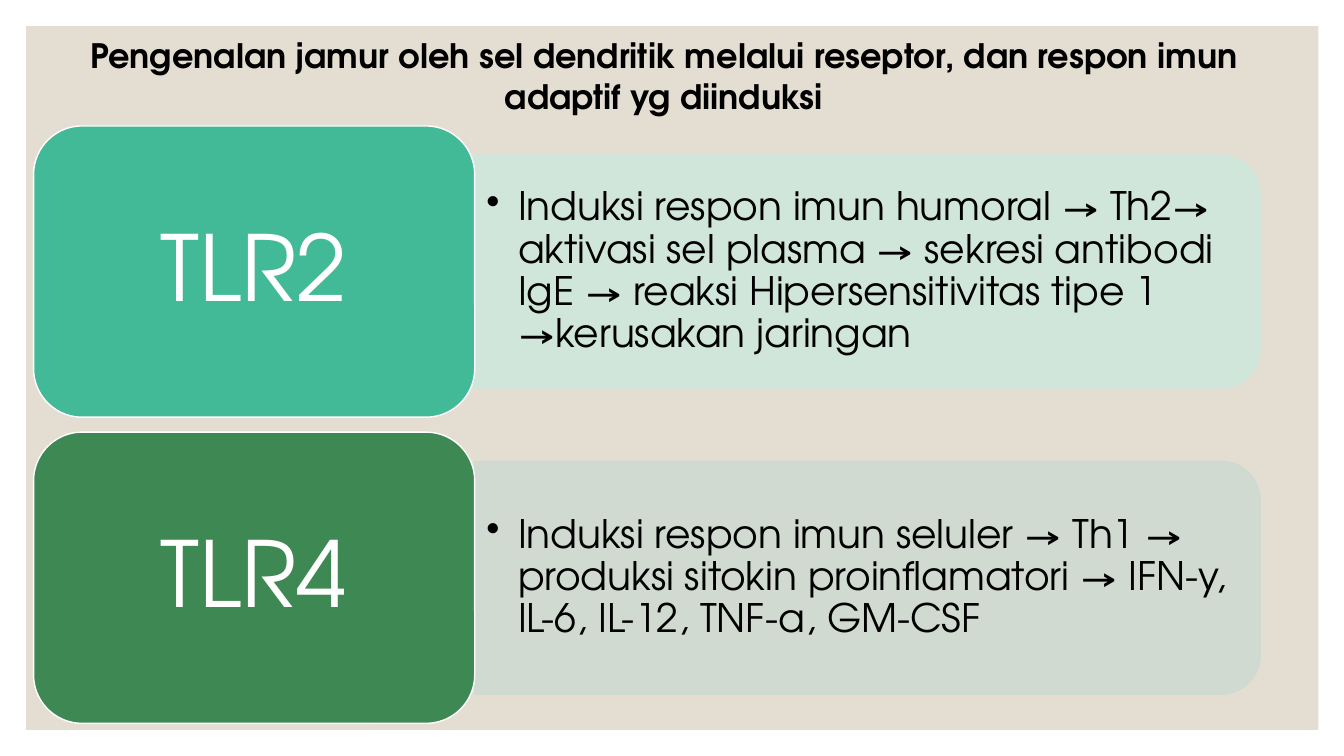
from lxml.etree import SubElement
from pptx import Presentation
from pptx.dml.color import RGBColor
from pptx.enum.shapes import MSO_SHAPE
from pptx.enum.text import MSO_ANCHOR, MSO_AUTO_SIZE, PP_ALIGN
from pptx.oxml.ns import qn
from pptx.util import Pt

HUES = {
    "panel": "E3DED1", "white": "FFFFFF", "black": "000000",
    "teal": "42BA97", "mint": "CFE7DD",
    "green": "3E8853", "sage": "CEDAD1",
}
TITLE = ("Pengenalan jamur oleh sel dendritik melalui reseptor, "
         "dan respon imun adaptif yg diinduksi")
ROWS = [
    ("TLR2", "teal", "mint",
     "Induksi respon imun humoral → Th2→ aktivasi sel plasma → sekresi "
     "antibodi IgE → reaksi Hipersensitivitas tipe 1 →kerusakan jaringan"),
    ("TLR4", "green", "sage",
     "Induksi respon imun seluler → Th1 → produksi sitokin proinflamatori "
     "→ IFN-y, IL-6, IL-12, TNF-a, GM-CSF"),
]
TOP, PITCH = 90, 218.7
HIGH, DEEP = 208, 166.4


class Deck:
    """Holds the style and the current slide."""

    font = "TeX Gyre Adventor"

    def __init__(self, slide):
        self.shapes = slide.shapes

    def hue(self, name):
        return RGBColor.from_string(HUES[name])

    def place(self, item, left, top, width, height):
        item.left, item.top = Pt(left), Pt(top)
        item.width, item.height = Pt(width), Pt(height)

    def text(self, frame, words, size, hue, bold=False, align=PP_ALIGN.CENTER,
             anchor=MSO_ANCHOR.MIDDLE, space=0.9):
        frame.word_wrap = True
        frame.auto_size = MSO_AUTO_SIZE.NONE
        frame.vertical_anchor = anchor
        para = frame.paragraphs[0]
        para.alignment = align
        para.line_spacing = space
        run = para.add_run()
        run.text = words
        run.font.name, run.font.size = self.font, Pt(size)
        run.font.bold = bold
        run.font.color.rgb = self.hue(hue)
        return para

    def shape(self, kind, box, fill, line=None):
        item = self.shapes.add_shape(kind, *map(Pt, box))
        item.shadow.inherit = False
        item.fill.solid()
        item.fill.fore_color.rgb = self.hue(fill)
        if line:
            item.line.color.rgb = self.hue(line)
            item.line.width = Pt(1)
        else:
            item.line.fill.background()
        return item

    def title(self, words):
        item = self.shapes.title
        self.place(item, 18, 21.6, 912.2, 65.5)
        self.text(item.text_frame, words, 24, "black", bold=True,
                  anchor=MSO_ANCHOR.TOP, space=1.0)

    def panel(self):
        item = self.shape(MSO_SHAPE.RECTANGLE, (18.7, 18.7, 923, 502.6), "panel")
        self.shapes.element.insert(2, item.element)

    def band(self, mid, fill):
        wide = 561
        left = 339.1 + (wide - DEEP) / 2
        item = self.shape(MSO_SHAPE.ROUND_2_SAME_RECTANGLE,
                          (left, mid - wide / 2, DEEP, wide), fill, fill)
        item.rotation = 90
        for tint in item.element.spPr.iter(qn("a:srgbClr")):
            SubElement(tint, qn("a:alpha"), val="90000")

    def point(self, mid, words):
        deep = 150.2
        item = self.shapes.add_textbox(
            Pt(339.1), Pt(mid - deep / 2), Pt(552.4), Pt(deep))
        frame = item.text_frame
        frame.margin_left = frame.margin_right = Pt(8.4)
        frame.margin_top = frame.margin_bottom = Pt(4.2)
        para = self.text(frame, words, 28, "black", align=PP_ALIGN.LEFT)
        props = para._p.get_or_add_pPr()
        props.set("marL", str(Pt(22.5)))
        props.set("indent", str(-Pt(22.5)))
        SubElement(props, qn("a:buChar"), char="•")

    def label(self, mid, words, fill):
        item = self.shape(MSO_SHAPE.ROUNDED_RECTANGLE,
                          (24, mid - HIGH / 2, 315.1, HIGH), fill, "white")
        self.text(item.text_frame, words, 65, "white")


def main():
    show = Presentation()
    show.slide_width, show.slide_height = Pt(960), Pt(540)
    deck = Deck(show.slides.add_slide(show.slide_layouts[5]))
    deck.panel()
    deck.title(TITLE)
    for row, (name, dark, pale, words) in enumerate(ROWS):
        mid = TOP + HIGH / 2 + row * PITCH
        deck.band(mid, pale)
        deck.point(mid, words)
        deck.label(mid, name, dark)
    show.save("out.pptx")


if __name__ == "__main__":
    main()
